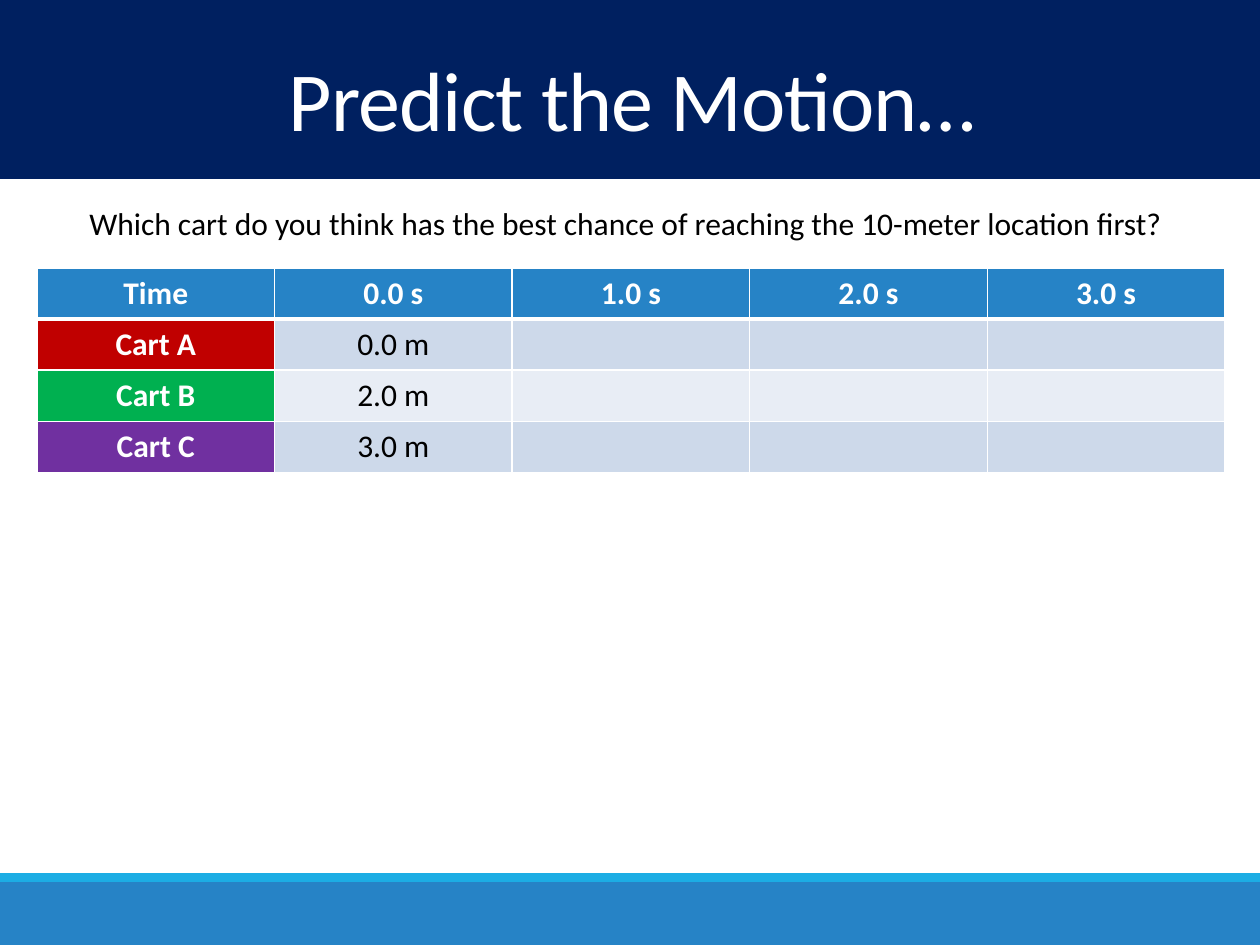
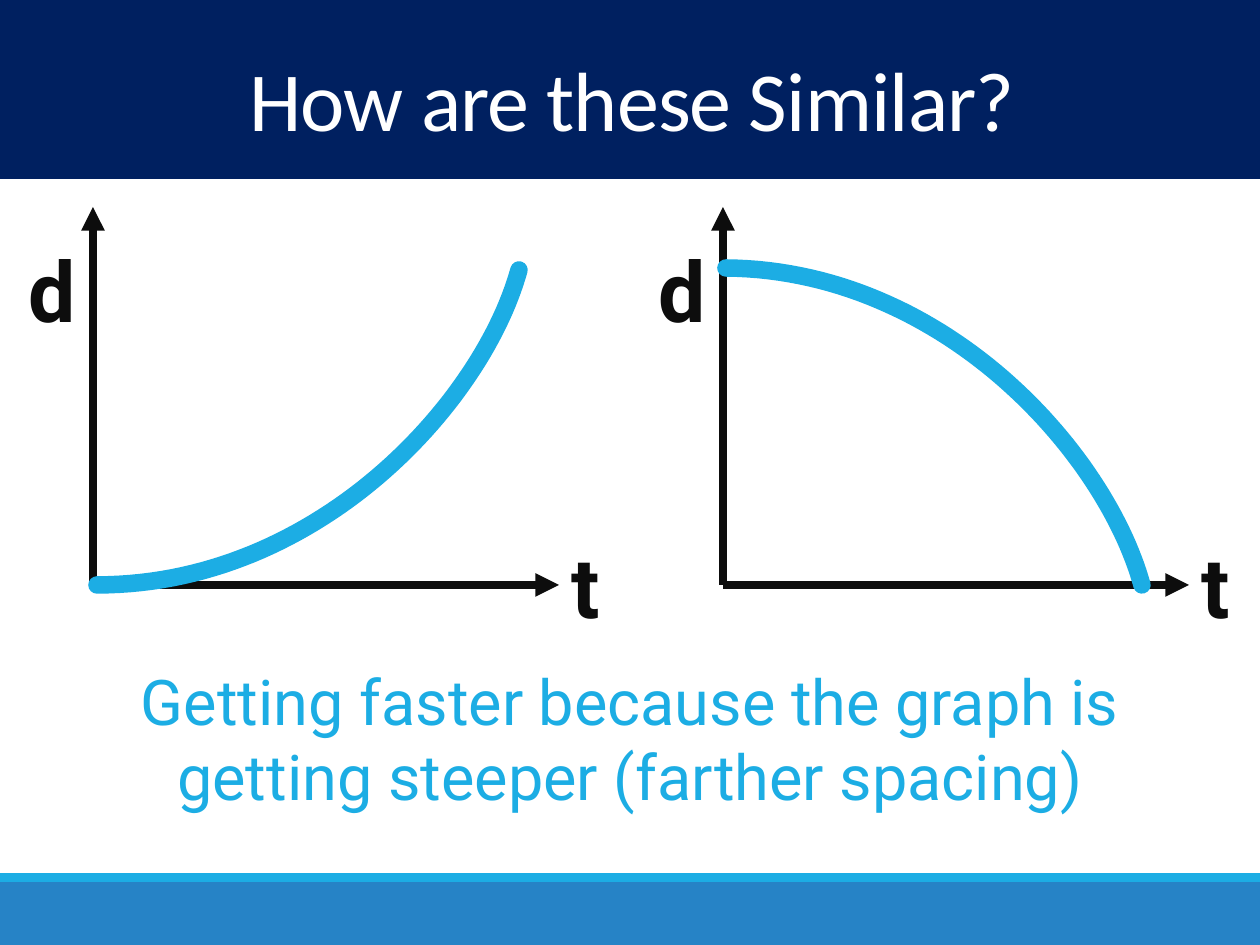
from lxml.etree import SubElement
from pptx import Presentation
from pptx.dml.color import RGBColor
from pptx.enum.shapes import MSO_CONNECTOR, MSO_SHAPE
from pptx.enum.text import MSO_ANCHOR, MSO_AUTO_SIZE, PP_ALIGN
from pptx.oxml.ns import qn
from pptx.util import Emu, Pt

SCALE = 914400 / 126
WIDE, HIGH = 1260, 945

NAVY = RGBColor(0x00, 0x20, 0x60)
BLUE = RGBColor(0x26, 0x83, 0xC6)
SKY = RGBColor(0x1C, 0xAD, 0xE4)
WHITE = RGBColor(0xFF, 0xFF, 0xFF)
BLACK = RGBColor(0x00, 0x00, 0x00)
INK = RGBColor(0x0D, 0x0D, 0x0D)
RED = RGBColor(0xC0, 0x00, 0x00)
GREEN = RGBColor(0x00, 0xB0, 0x50)
PURPLE = RGBColor(0x70, 0x30, 0xA0)
MIST = RGBColor(0xCD, 0xD9, 0xEA)
PALE = RGBColor(0xE8, 0xED, 0xF5)

TIMES = ["Time", "0.0 s", "1.0 s", "2.0 s", "3.0 s"]
CARTS = [("Cart A", "0.0 m", RED), ("Cart B", "2.0 m", GREEN), ("Cart C", "3.0 m", PURPLE)]
RISING = [(4, 585), (226, 585), (390, 401), (426, 270)]
FALLING = [(3, 268), (222, 270), (383, 454), (419, 585)]


def px(*nums):
    return [Emu(round(num * SCALE)) for num in nums]


def add_band(slide, top, height, color):
    band = slide.shapes.add_shape(MSO_SHAPE.RECTANGLE, *px(0, top, WIDE, height))
    band.shadow.inherit = False
    band.fill.solid()
    band.fill.fore_color.rgb = color
    band.line.fill.background()


def style_text(frame, text, size, face, color, bold=False, align=None):
    frame.text = text
    line = frame.paragraphs[0]
    line.alignment = align
    for run in line.runs:
        font = run.font
        font.size, font.name, font.bold = Pt(size), face, bold
        font.color.rgb = color
    return line


def add_text(slide, box, text, size, face, color, wrap=False, **style):
    frame = slide.shapes.add_textbox(*px(*box)).text_frame
    frame.word_wrap = wrap
    frame.auto_size = MSO_AUTO_SIZE.SHAPE_TO_FIT_TEXT
    style_text(frame, text, size, face, color, **style)
    return frame


def add_page(deck, title):
    slide = deck.slides.add_slide(deck.slide_layouts[6])
    add_band(slide, 882, 63, BLUE)
    add_band(slide, 873, 9, SKY)
    add_band(slide, 0, 179, NAVY)
    frame = add_text(slide, (4, 53, 1256, 106), title, 48, "Calibri", WHITE,
                     wrap=True, align=PP_ALIGN.CENTER)
    frame.auto_size = MSO_AUTO_SIZE.NONE
    frame.vertical_anchor = MSO_ANCHOR.MIDDLE
    line = frame.paragraphs[0]
    line.line_spacing = 0.85
    line.runs[0].font._element.set("spc", "-50")
    return slide


def add_edges(cell, base):
    props = cell._tc.get_or_add_tcPr()
    for spot, side in enumerate("LRTB"):
        width = base if side == "B" else 1
        edge = SubElement(props, qn(f"a:ln{side}"), w=str(Pt(width)))
        fill = SubElement(edge, qn("a:solidFill"))
        SubElement(fill, qn("a:srgbClr"), val=str(WHITE))
        props.insert(spot, edge)


def fill_cell(cell, text, back, head, base=1):
    cell.fill.solid()
    cell.fill.fore_color.rgb = back
    cell.vertical_anchor = MSO_ANCHOR.MIDDLE
    style_text(cell.text_frame, text, 18, "Calibri", WHITE if head else BLACK,
               bold=head, align=PP_ALIGN.CENTER)
    add_edges(cell, base)


def add_times(slide):
    table = slide.shapes.add_table(4, 5, *px(37, 268, 1188, 204)).table
    for col, time in enumerate(TIMES):
        fill_cell(table.cell(0, col), time, BLUE, True, 3)
    for row, (cart, start, color) in enumerate(CARTS, 1):
        shade = MIST if row % 2 else PALE
        fill_cell(table.cell(row, 0), cart, color, True)
        for col, text in enumerate([start, "", "", ""], 1):
            fill_cell(table.cell(row, col), text, shade, False)


def add_axis(slide, tip, root):
    axis = slide.shapes.add_connector(MSO_CONNECTOR.STRAIGHT, *px(*tip, *root))
    axis.line.width = Pt(4.5)
    axis.line.color.rgb = INK
    SubElement(axis.line._get_or_add_ln(), qn("a:headEnd"), type="triangle")
    SubElement(axis._element.spPr, qn("a:effectLst"))


def bend(ends, part):
    a, b, c, d = ends
    rest = 1 - part
    return (rest**3 * a + 3 * rest**2 * part * b
            + 3 * rest * part**2 * c + part**3 * d)


def add_curve(slide, left, knots):
    across, down = zip(*knots)
    steps = 60
    dots = [px(left + bend(across, step / steps), bend(down, step / steps))
            for step in range(steps + 1)]
    path = slide.shapes.build_freeform(*dots[0], scale=1.0)
    path.add_line_segments(dots[1:], close=False)
    curve = path.convert_to_shape()
    curve.shadow.inherit = False
    curve.fill.background()
    curve.line.width = Pt(10)
    curve.line.color.rgb = SKY
    stroke = curve.line._get_or_add_ln()
    stroke.set("cap", "rnd")
    SubElement(stroke, qn("a:round"))


def add_graph(slide, left, knots):
    root = (left, 585)
    right = left + 466
    add_axis(slide, (left, 207), root)
    add_axis(slide, (right, 585), root)
    add_text(slide, (left - 77, 232, 78, 115), "d", 48, "Roboto", INK, bold=True)
    add_text(slide, (right, 528, 58, 115), "t", 48, "Roboto", INK, bold=True)
    add_curve(slide, left, knots)


def main():
    deck = Presentation()
    deck.slide_width, deck.slide_height = px(WIDE, HIGH)

    slide = add_page(deck, "Predict the Motion…")
    add_times(slide)
    add_text(slide, (77, 198, 1106, 51),
             "Which cart do you think has the best chance of reaching the 10-meter location first?",
             18, "Calibri", BLACK)

    slide = add_page(deck, "How are these Similar?")
    add_graph(slide, 723, FALLING)
    add_graph(slide, 93, RISING)
    add_text(slide, (67, 656, 1126, 165),
             "Getting faster because the graph is getting steeper (farther spacing)",
             36, "Roboto", SKY, wrap=True, align=PP_ALIGN.CENTER)

    deck.save("out.pptx")


if __name__ == "__main__":
    main()
